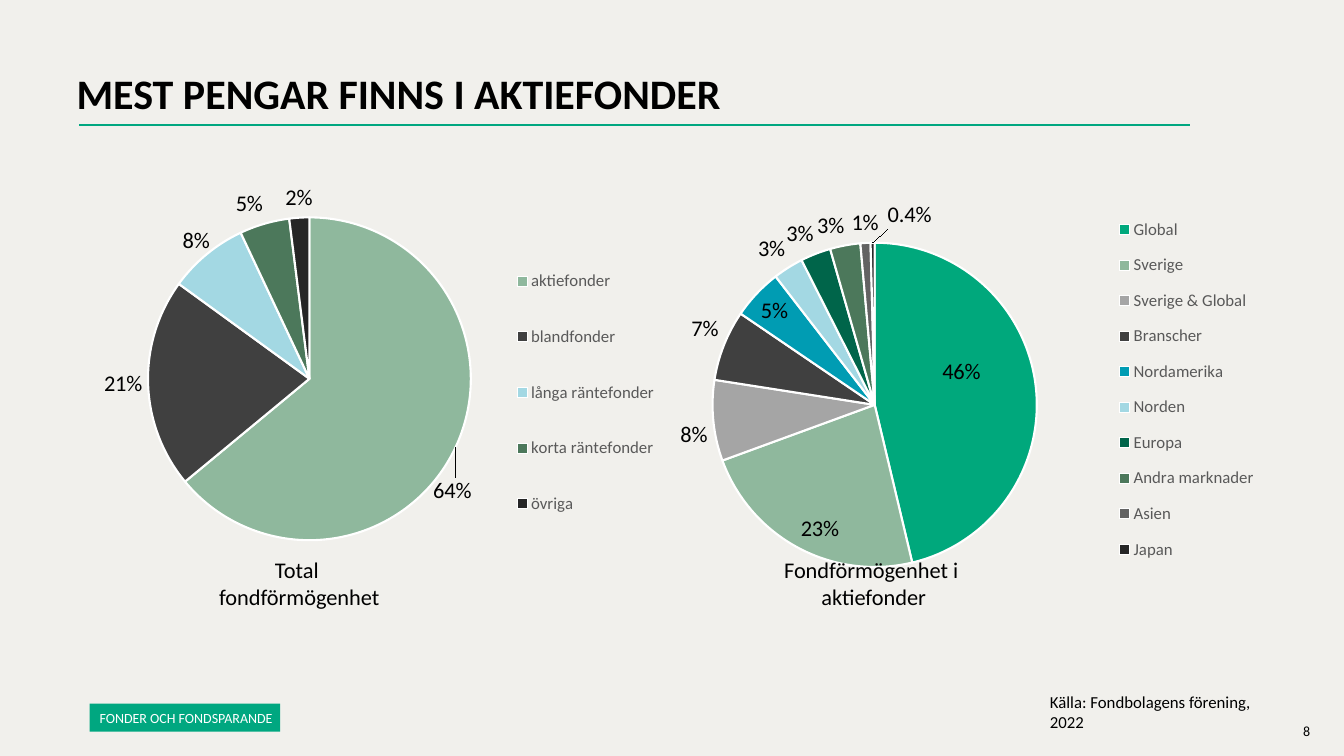
from lxml.etree import SubElement
from pptx import Presentation
from pptx.chart.data import CategoryChartData
from pptx.dml.color import RGBColor
from pptx.enum.chart import XL_CHART_TYPE as ChartType
from pptx.enum.chart import XL_LABEL_POSITION as LabelPos
from pptx.enum.chart import XL_LEGEND_POSITION as LegendPos
from pptx.enum.shapes import MSO_CONNECTOR, MSO_SHAPE
from pptx.enum.text import MSO_ANCHOR, PP_ALIGN
from pptx.oxml import parse_xml
from pptx.oxml.ns import qn
from pptx.util import Cm, Pt

COLORS = {
    "background": "F1F0EC", "accent": "00A780", "black": "000000",
    "white": "FFFFFF", "legend": "595959", "green": "00A87C",
    "sage": "8FB89D", "silver": "A5A5A5", "charcoal": "404040",
    "teal": "009CB3", "sky": "A3D8E3", "pine": "00654A",
    "moss": "4C785B", "gray": "636363", "ink": "262626",
}
CHART_NS = "http://schemas.openxmlformats.org/drawingml/2006/chart"
OUT, IN, CENTER = LabelPos.OUTSIDE_END, LabelPos.INSIDE_END, LabelPos.CENTER

# name, value, color, label position, label offset (share of the chart)
TOTAL_FUNDS = [
    ("aktiefonder", 0.64, "sage", OUT, (-0.04, 0.06)),
    ("blandfonder", 0.21, "charcoal", OUT, None),
    ("långa räntefonder", 0.08, "sky", OUT, (0.01, 0.01)),
    ("korta räntefonder", 0.05, "moss", OUT, None),
    ("övriga", 0.02, "ink", OUT, None),
]
EQUITY_FUNDS = [
    ("Global", 0.46, "green", CENTER, (0.01, -0.06)),
    ("Sverige", 0.23, "sage", IN, None),
    ("Sverige & Global", 0.08, "silver", OUT, None),
    ("Branscher", 0.07, "charcoal", OUT, None),
    ("Nordamerika", 0.05, "teal", IN, None),
    ("Norden", 0.03, "sky", OUT, None),
    ("Europa", 0.03, "pine", OUT, None),
    ("Andra marknader", 0.03, "moss", OUT, None),
    ("Asien", 0.01, "gray", OUT, None),
    ("Japan", 0.004, "ink", OUT, (0.06, -0.02)),
]


def rgb(name):
    return RGBColor.from_string(COLORS[name])


def make_layout(**settings):
    """Build a manual chart layout from its settings, in schema order."""
    layout = parse_xml(f'<c:layout xmlns:c="{CHART_NS}"/>')
    manual = SubElement(layout, qn("c:manualLayout"))
    for tag, value in settings.items():
        SubElement(manual, qn(f"c:{tag}")).set("val", str(value))
    return layout


def area_layout(x, y, w, h, **target):
    return make_layout(**target, xMode="edge", yMode="edge", x=x, y=y, w=w, h=h)


class FundPage:
    font = "Calibri"

    def __init__(self, deck):
        self.page = deck.slides.add_slide(deck.slide_layouts[6])
        fill = self.page.background.fill
        fill.solid()
        fill.fore_color.rgb = rgb("background")

    def style(self, font, size, color="black", bold=False):
        font.name, font.size, font.bold = self.font, Pt(size), bold
        font.color.rgb = rgb(color)

    def text(self, words, left, top, width, height, size, bold=False,
             align=PP_ALIGN.LEFT, spacing=1.0):
        box = self.page.shapes.add_textbox(Cm(left), Cm(top), Cm(width), Cm(height))
        frame = box.text_frame
        frame.word_wrap = True
        frame.text = words
        para = frame.paragraphs[0]
        para.alignment, para.line_spacing = align, spacing
        for span in para.runs:
            self.style(span.font, size, bold=bold)

    def tag(self, words, left, top, width, height):
        box = self.page.shapes.add_shape(
            MSO_SHAPE.RECTANGLE, Cm(left), Cm(top), Cm(width), Cm(height))
        box.shadow.inherit = False
        box.fill.solid()
        box.fill.fore_color.rgb = rgb("accent")
        box.line.fill.background()
        frame = box.text_frame
        frame.word_wrap = False
        frame.vertical_anchor = MSO_ANCHOR.MIDDLE
        frame.margin_left, frame.margin_right = Cm(0.25), Cm(0.1)
        frame.text = words
        para = frame.paragraphs[0]
        para.alignment = PP_ALIGN.LEFT
        self.style(para.runs[0].font, 10, "white")

    def rule(self, left, right, top):
        line = self.page.shapes.add_connector(
            MSO_CONNECTOR.STRAIGHT, Cm(left), Cm(top), Cm(right), Cm(top))
        line.line.color.rgb = rgb("accent")
        line.line.width = Pt(1.5)
        SubElement(line._element.spPr, qn("a:effectLst"))

    def pie(self, funds, left, top, width, height, plot_area, legend_area):
        data = CategoryChartData(number_format="0%")
        data.categories = [fund[0] for fund in funds]
        data.add_series("Series 1", [fund[1] for fund in funds])
        chart = self.page.shapes.add_chart(
            ChartType.PIE, Cm(left), Cm(top), Cm(width), Cm(height), data).chart
        chart.has_title = False
        self.style(chart.font, 10)
        plot = chart.plots[0]
        plot.vary_by_categories = True

        area = plot._element.getparent()
        for old in area.findall(qn("c:layout")):
            area.remove(old)
        area.insert(0, area_layout(*plot_area, layoutTarget="inner"))

        chart.has_legend = True
        legend = chart.legend
        legend.position = LegendPos.RIGHT
        legend.include_in_layout = False
        self.style(legend.font, 12, "legend")
        legend._element.find(qn("c:legendPos")).addnext(area_layout(*legend_area))

        series = plot.series[0]
        labels = series.data_labels
        labels.show_value = True
        labels.number_format, labels.number_format_is_linked = "0%", False
        self.style(labels.font, 16)
        for point_no, fund in enumerate(funds):
            self.slice(series.points[point_no], *fund[2:4])
        for label, fund in zip(labels._element.findall(qn("c:dLbl")), funds):
            self.adjust_label(label, fund[1], fund[4])

    def slice(self, point, color, position):
        point.format.fill.solid()
        point.format.fill.fore_color.rgb = rgb(color)
        point.format.line.color.rgb = rgb("white")
        point.format.line.width = Pt(1.5)
        self.style(point.data_label.font, 16)
        point.data_label.position = position

    def adjust_label(self, label, value, offset):
        """Set the number format of one label and move it by its offset."""
        code = "0.0%" if value < 0.01 else "0%"
        index = label.find(qn("c:idx"))
        index.addnext(parse_xml(
            f'<c:numFmt xmlns:c="{CHART_NS}" formatCode="{code}" sourceLinked="0"/>'))
        if offset:
            index.addnext(make_layout(x=offset[0], y=offset[1]))


def main():
    deck = Presentation()
    deck.slide_width, deck.slide_height = Cm(33.87), Cm(19.05)
    page = FundPage(deck)
    page.rule(2, 30, 3.15)
    page.text("MEST PENGAR FINNS I AKTIEFONDER", 1.68, 1.73, 29.2, 3.68, 30,
              bold=True, spacing=0.9)
    page.tag("FONDER OCH FONDSPARANDE", 2.26, 17.73, 4.8, 0.71)
    page.pie(EQUITY_FUNDS, 16.36, 4.95, 15.57, 9.73,
             (0.1, 0.12, 0.53, 0.84), (0.75, 0.02, 0.24, 0.96))
    page.pie(TOTAL_FUNDS, 0.23, 3.53, 17.4, 11.46,
             (0.2, 0.17, 0.47, 0.71), (0.72, 0.21, 0.23, 0.69))
    for words, left, width in (("Total \vfondförmögenhet", 2.26, 10.57),
                               ("Fondförmögenhet i \vaktiefonder", 15.34, 13.36)):
        page.text(words, left, 13.89, width, 1.63, 16, align=PP_ALIGN.CENTER)
    page.text("Källa: Fondbolagens förening, 2022", 26.21, 17.3, 6.5, 0.76, 12)
    page.text("8", 32.59, 18.08, 1.02, 0.69, 10)
    deck.save("out.pptx")


if __name__ == "__main__":
    main()
